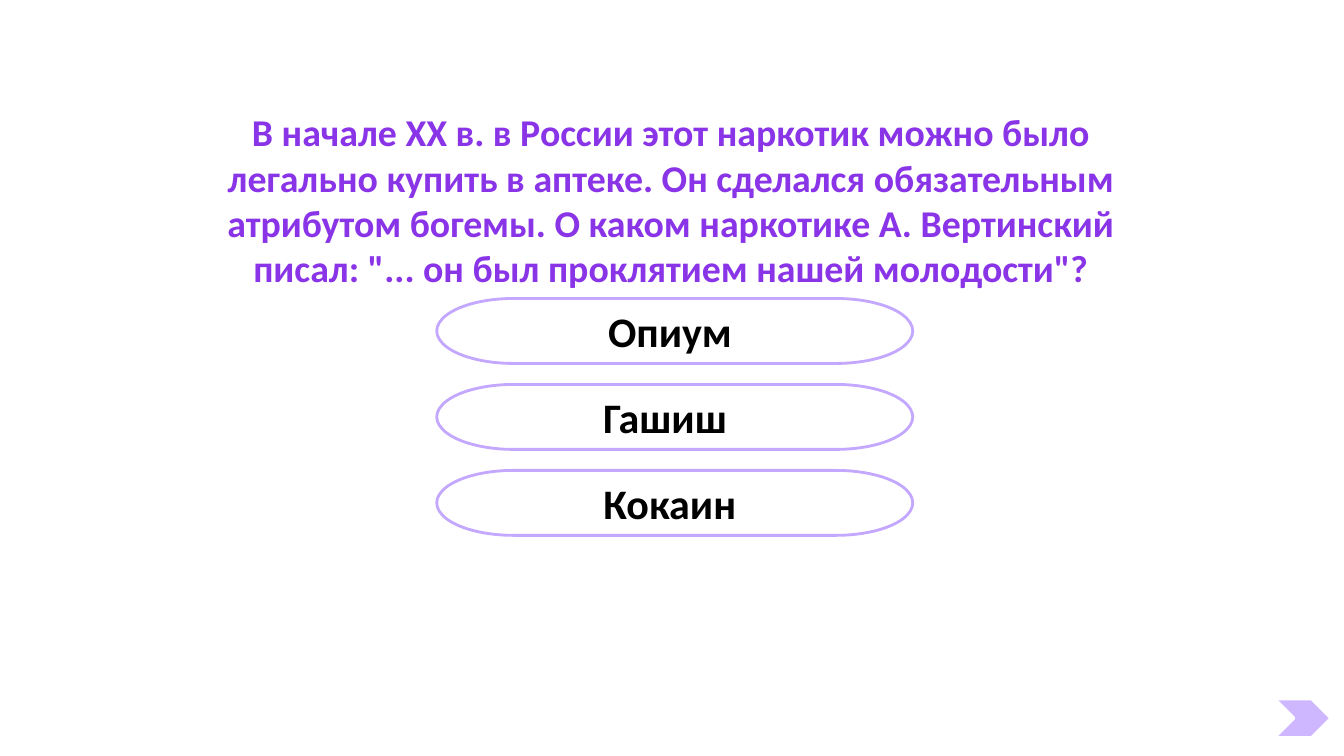
from pptx import Presentation
from pptx.dml.color import RGBColor
from pptx.enum.shapes import MSO_SHAPE
from pptx.enum.text import MSO_ANCHOR, MSO_AUTO_SIZE, PP_ALIGN
from pptx.util import Pt

TERMINATOR = MSO_SHAPE.FLOWCHART_TERMINATOR
CHEVRON = MSO_SHAPE.CHEVRON
TOP, MIDDLE = MSO_ANCHOR.TOP, MSO_ANCHOR.MIDDLE
CENTER = PP_ALIGN.CENTER
FIT_SHAPE = MSO_AUTO_SIZE.SHAPE_TO_FIT_TEXT


def color(hex_code):
    return RGBColor.from_string(hex_code)


def write_centered(frame, text, size, hex_code):
    frame.word_wrap = True
    paragraph = frame.paragraphs[0]
    paragraph.alignment = CENTER
    run = paragraph.add_run()
    run.text = text
    run.font.name = "Calibri"
    run.font.size = Pt(size)
    run.font.bold = True
    run.font.color.rgb = color(hex_code)


prs = Presentation()
prs.slide_width, prs.slide_height = Pt(960), Pt(540)
slide = prs.slides.add_slide(prs.slide_layouts[5])

# Question
question = slide.shapes.title
question.left, question.top = Pt(126), Pt(74.2)
question.width, question.height = Pt(706.3), Pt(138.2)
question.text_frame.vertical_anchor = TOP
question.text_frame.auto_size = FIT_SHAPE
write_centered(
    question.text_frame,
    "В начале XX в. в России этот наркотик можно было легально купить в аптеке. "
    "Он сделался обязательным атрибутом богемы. О каком наркотике А. Вертинский "
    'писал: "... он был проклятием нашей молодости"?',
    27, "8A34E8")

# Answers: text and right inset, which sets the words slightly left of centre
answers = [("Опиум", 14), ("Гашиш", 21), ("Кокаин", 14)]
for row, (answer, right_inset) in enumerate(answers):
    button = slide.shapes.add_shape(
        TERMINATOR, Pt(312), Pt(213.2 + 61.4 * row), Pt(340), Pt(46.4))
    button.shadow.inherit = False
    button.fill.background()
    button.line.color.rgb = color("C4A7FF")
    button.line.width = Pt(2)
    button.text_frame.vertical_anchor = MIDDLE
    button.text_frame.margin_right = Pt(right_inset)
    write_centered(button.text_frame, answer, 30, "000000")

# Arrow to the next question
next_arrow = slide.shapes.add_shape(CHEVRON, Pt(910), Pt(499), Pt(41), Pt(28))
next_arrow.shadow.inherit = False
next_arrow.fill.solid()
next_arrow.fill.fore_color.rgb = color("CFB7FF")
next_arrow.line.color.rgb = color("FFFFFF")
next_arrow.line.width = Pt(2.5)

prs.save("out.pptx")
